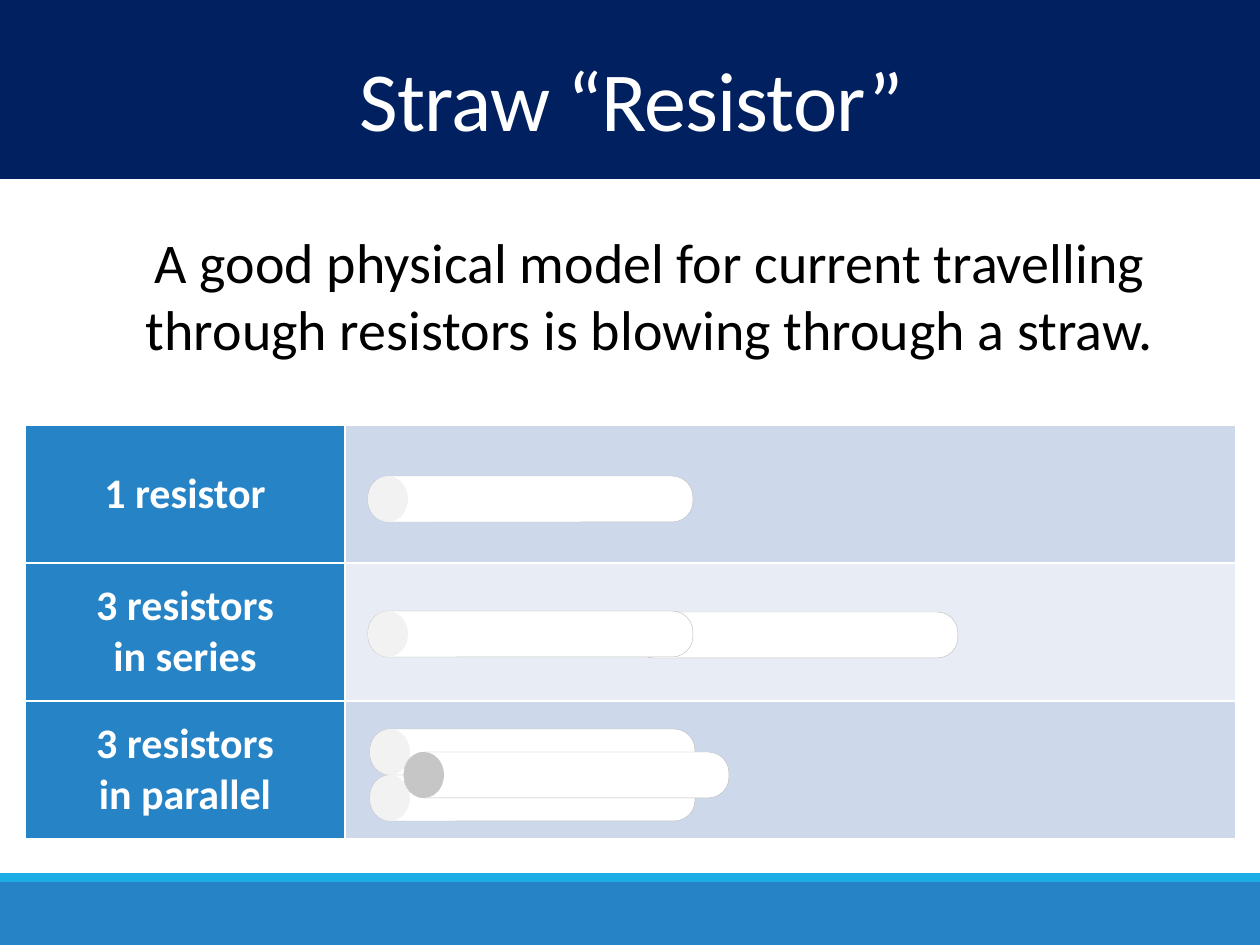
from lxml import etree
from pptx import Presentation
from pptx import util as u
from pptx.dml.color import RGBColor
from pptx.enum import shapes, text
from pptx.oxml import ns

NAVY = RGBColor(0x00, 0x20, 0x60)
BLUE = RGBColor(0x26, 0x83, 0xC6)
CYAN = RGBColor(0x1C, 0xAD, 0xE4)
WHITE = RGBColor(0xFF, 0xFF, 0xFF)
BLACK = RGBColor(0x00, 0x00, 0x00)
BAND_DARK = RGBColor(0xCD, 0xD9, 0xEA)
BAND_LIGHT = RGBColor(0xE8, 0xED, 0xF5)
EDGE = RGBColor(0xBF, 0xBF, 0xBF)
CAP_LIGHT = RGBColor(0xF2, 0xF2, 0xF2)
CAP_DARK = RGBColor(0xC6, 0xC6, 0xC6)
STRAW_H = 46
CAP_W = 40


def px(n):
    return u.Emu(round(n * 914400 / 126))


class Deck:
    """Style and current slide, with one method per kind of element."""

    font = "Calibri"

    def __init__(self):
        self.prs = Presentation()
        self.prs.slide_width, self.prs.slide_height = px(1260), px(945)
        self.s = self.prs.slides.add_slide(self.prs.slide_layouts[5])

    def shape(self, kind, x, y, w, h, fill, line=None):
        sp = self.s.shapes.add_shape(kind, px(x), px(y), px(w), px(h))
        sp.shadow.inherit = False
        sp.fill.solid()
        sp.fill.fore_color.rgb = fill
        if line is None:
            sp.line.fill.background()
        else:
            sp.line.color.rgb = line
            sp.line.width = u.Pt(0.25)
        return sp

    def band(self, y, h, fill):
        self.shape(shapes.MSO_SHAPE.RECTANGLE, 0, y, 1260, h, fill)

    def set_text(self, tf, words, size, color, bold=False):
        tf.text = words
        tf.word_wrap = True
        for p in tf.paragraphs:
            p.alignment = text.PP_ALIGN.CENTER
            p.font.name, p.font.size = self.font, u.Pt(size)
            p.font.color.rgb, p.font.bold = color, bold

    def title(self, words, x, y, w, h):
        sp = self.s.shapes.title
        sp.left, sp.top, sp.width, sp.height = map(px, (x, y, w, h))
        self.s.shapes._spTree.append(sp._element)
        tf = sp.text_frame
        self.set_text(tf, words, 48, WHITE)
        tf.auto_size = text.MSO_AUTO_SIZE.NONE
        tf.vertical_anchor = text.MSO_ANCHOR.MIDDLE
        p = tf.paragraphs[0]
        p.line_spacing = 0.85
        p.runs[0]._r.get_or_add_rPr().set("spc", "-50")

    def textbox(self, words, x, y, w, h):
        sp = self.s.shapes.add_textbox(px(x), px(y), px(w), px(h))
        self.set_text(sp.text_frame, words, 32, BLACK)

    def cell(self, cell, fill):
        tcPr = cell._tc.get_or_add_tcPr()
        for side in ("lnL", "lnR", "lnT", "lnB"):
            ln = etree.SubElement(tcPr, ns.qn(f"a:{side}"), w="12700")
            solid = etree.SubElement(ln, ns.qn("a:solidFill"))
            etree.SubElement(solid, ns.qn("a:srgbClr"), val=str(WHITE))
        cell.fill.solid()
        cell.fill.fore_color.rgb = fill
        cell.vertical_anchor = text.MSO_ANCHOR.MIDDLE

    def table(self, labels, x, y, widths, row_h):
        table = self.s.shapes.add_table(
            len(labels), len(widths), px(x), px(y),
            px(sum(widths)), px(row_h * len(labels))).table
        for column, w in zip(table.columns, widths):
            column.width = px(w)
        for i, label in enumerate(labels):
            table.rows[i].height = px(row_h)
            head, body = table.cell(i, 0), table.cell(i, 1)
            self.cell(head, BLUE)
            self.cell(body, BAND_LIGHT if i % 2 else BAND_DARK)
            self.set_text(head.text_frame, label, 24, WHITE, True)

    def straw(self, x, y, w=325, cap=CAP_LIGHT):
        sp = self.shape(shapes.MSO_SHAPE.ROUNDED_RECTANGLE,
                        x, y, w, STRAW_H, WHITE, EDGE)
        sp.adjustments[0] = 0.45
        if cap is not None:
            self.shape(shapes.MSO_SHAPE.OVAL, x, y, CAP_W, STRAW_H, cap)


def main():
    deck = Deck()
    deck.band(882, 63, BLUE)
    deck.band(873, 9, CYAN)
    deck.band(0, 179, NAVY)
    deck.title("Straw “Resistor”", 4, 53, 1256, 106)
    deck.textbox("A good physical model for current travelling through "
                 "resistors is blowing through a straw.", 52, 221, 1196, 149)
    deck.table(["1 resistor", "3 resistors\nin series",
                "3 resistors\nin parallel"], 25, 425, (320, 891), 138)

    deck.straw(368, 476)
    deck.straw(633, 612, cap=None)
    deck.straw(368, 611)
    for y in (729, 729 + STRAW_H):
        deck.straw(370, y)
    deck.straw(404, 752, cap=CAP_DARK)
    deck.prs.save("out.pptx")


if __name__ == "__main__":
    main()
